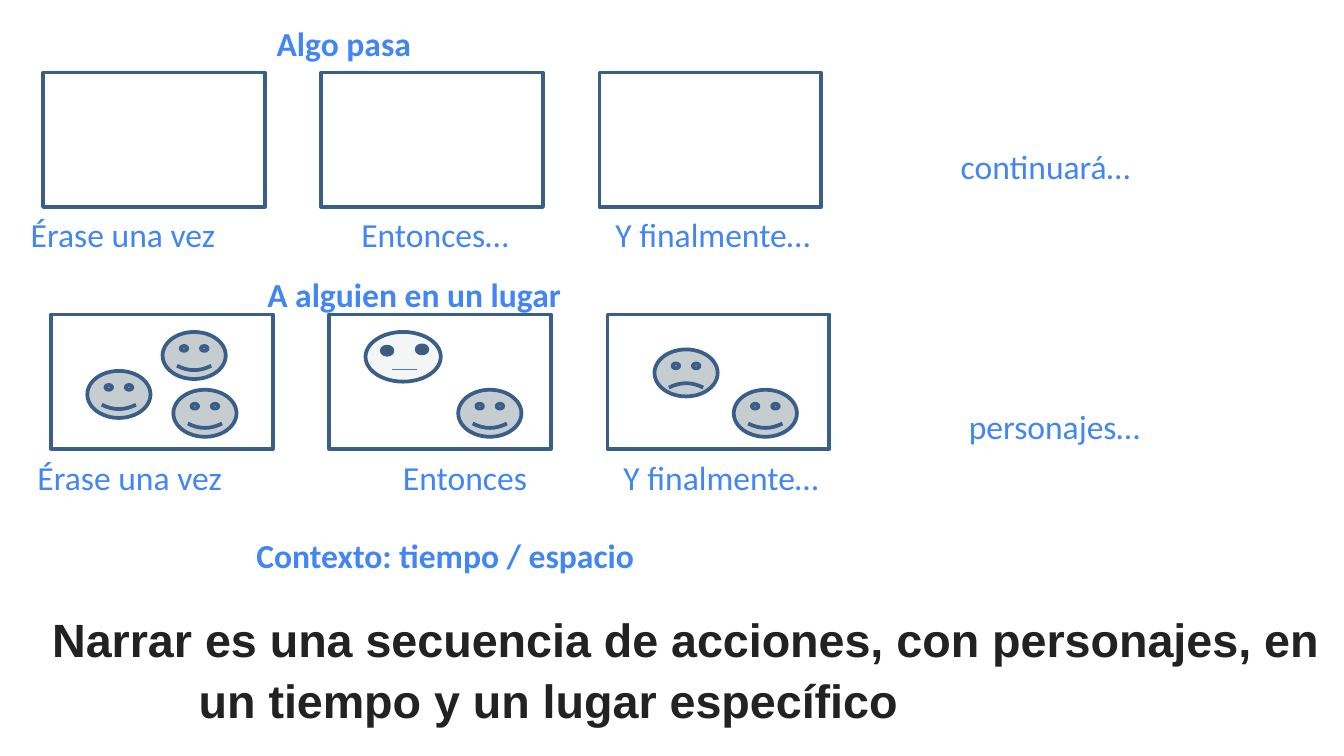
from lxml import etree
from pptx import Presentation
from pptx.dml.color import RGBColor
from pptx.enum import shapes, text
from pptx.oxml import ns
from pptx.util import Inches, Pt

THEME = {
    "label": "4285F4", "outline": "395E89", "face": "455A64",
    "mouth": "4A7DBA", "statement": "222222",
    "label_font": "Calibri", "label_size": 18,
    "statement_font": "Arial", "statement_size": 25, "statement_line": 33,
    "outline_width": 2, "mouth_width": 0.75,
}
PAGE_WIDTH = Inches(10)
PAGE_HEIGHT = PAGE_WIDTH * 9 // 16
FRAME_SIZE = (1.65, 1)
FRAME_STEP = 2.07
FRAME_ROWS = [(0.32, 0.54), (0.38, 2.34)]
FACE_SIZE = (0.47, 0.35)
SMILE = 0.047
FACES = [
    (0.65, 2.76, SMILE), (1.21, 2.47, SMILE), (1.29, 2.9, SMILE),
    (3.41, 2.9, SMILE), (4.87, 2.6, -SMILE), (5.46, 2.9, SMILE),
]
NEUTRAL_HEAD = (2.72, 2.47, 0.56, 0.37)
NEUTRAL_EYES = [(2.84, 2.58, 0.08, 0.06), (3.1, 2.57, 0.08, 0.06)]
NEUTRAL_MOUTH = (2.92, 2.75, 3.1, 2.75)
LABELS = [
    ("Érase una vez", 0.13, 1.54, 2.05),
    ("Entonces…", 2.59, 1.54, 1.54),
    ("Y finalmente…", 4.48, 1.54, 1.81),
    ("continuará…", 7.05, 1.04, 2.92),
    ("Érase una vez", 0.18, 3.35, 2.05),
    ("Entonces", 2.9, 3.35, 1.54),
    ("Y finalmente…", 4.54, 3.35, 1.81),
    ("personajes…", 7.11, 2.97, 1.95),
]
HEADINGS = [
    ("Algo pasa", 1.96, 0.12, 2.25),
    ("A alguien en un lugar", 1.89, 1.99, 2.91),
    ("Contexto: tiempo / espacio", 1.81, 3.93, 3.73),
]
LABEL_HEIGHT = 0.4
STATEMENT = ("Narrar es una secuencia de acciones, con personajes, "
             "en un tiempo y un lugar específico")
STATEMENT_AREA = (0.23, 4.49, 9.75, 1.14)
STATEMENT_INDENTS = (0.06, 1.15)
STATEMENT_INSET = 0.01


def color(name):
    return RGBColor.from_string(THEME[name])


def add_outlined(page, kind, area, fill=None, opacity=100):
    shape = page.shapes.add_shape(kind, *map(Inches, area))
    shape.shadow.inherit = False
    shape.line.color.rgb = color("outline")
    shape.line.width = Pt(THEME["outline_width"])
    if fill is None:
        shape.fill.background()
        return shape
    shape.fill.solid()
    shape.fill.fore_color.rgb = color(fill)
    if opacity < 100:
        tint = shape.fill._xPr.find(ns.qn("a:solidFill"))[0]
        etree.SubElement(tint, ns.qn("a:alpha"), val=str(opacity * 1000))
    return shape


def add_text(page, content, area, role, bold):
    box = page.shapes.add_textbox(*map(Inches, area))
    box.text_frame.word_wrap = True
    box.text_frame.text = content
    paragraph = box.text_frame.paragraphs[0]
    font = paragraph.runs[0].font
    font.name = THEME[role + "_font"]
    font.size = Pt(THEME[role + "_size"])
    font.bold = bold
    font.color.rgb = color(role)
    return box


def add_frames(page):
    for left, top in FRAME_ROWS:
        for column in range(3):
            area = (left + column * FRAME_STEP, top, *FRAME_SIZE)
            add_outlined(page, shapes.MSO_SHAPE.RECTANGLE, area)


def add_faces(page):
    for left, top, smile in FACES:
        face = add_outlined(page, shapes.MSO_SHAPE.SMILEY_FACE,
                            (left, top, *FACE_SIZE), "face", 30)
        face.adjustments[0] = smile
    add_outlined(page, shapes.MSO_SHAPE.OVAL, NEUTRAL_HEAD, "face", 6)
    for eye in NEUTRAL_EYES:
        add_outlined(page, shapes.MSO_SHAPE.OVAL, eye, "face")
    mouth = page.shapes.add_connector(shapes.MSO_CONNECTOR.STRAIGHT,
                                      *map(Inches, NEUTRAL_MOUTH))
    mouth.line.color.rgb = color("mouth")
    mouth.line.width = Pt(THEME["mouth_width"])
    etree.SubElement(mouth._element.spPr, ns.qn("a:effectLst"))


def add_labels(page):
    for group, bold in ((LABELS, False), (HEADINGS, True)):
        for content, left, top, width in group:
            box = add_text(page, content, (left, top, width, LABEL_HEIGHT), "label", bold)
            box.text_frame.auto_size = text.MSO_AUTO_SIZE.SHAPE_TO_FIT_TEXT


def add_statement(page):
    box = add_text(page, STATEMENT, STATEMENT_AREA, "statement", True)
    box.text_frame.margin_top = Inches(STATEMENT_INSET)
    paragraph = box.text_frame.paragraphs[0]
    paragraph.line_spacing = Pt(THEME["statement_line"])
    first, following = STATEMENT_INDENTS
    properties = paragraph._p.get_or_add_pPr()
    properties.set("marL", str(Inches(following)))
    properties.set("indent", str(Inches(first - following)))


def main():
    deck = Presentation()
    deck.slide_width, deck.slide_height = PAGE_WIDTH, PAGE_HEIGHT
    page = deck.slides.add_slide(deck.slide_layouts[6])
    add_frames(page)
    add_faces(page)
    add_labels(page)
    add_statement(page)
    deck.save("out.pptx")


if __name__ == "__main__":
    main()
